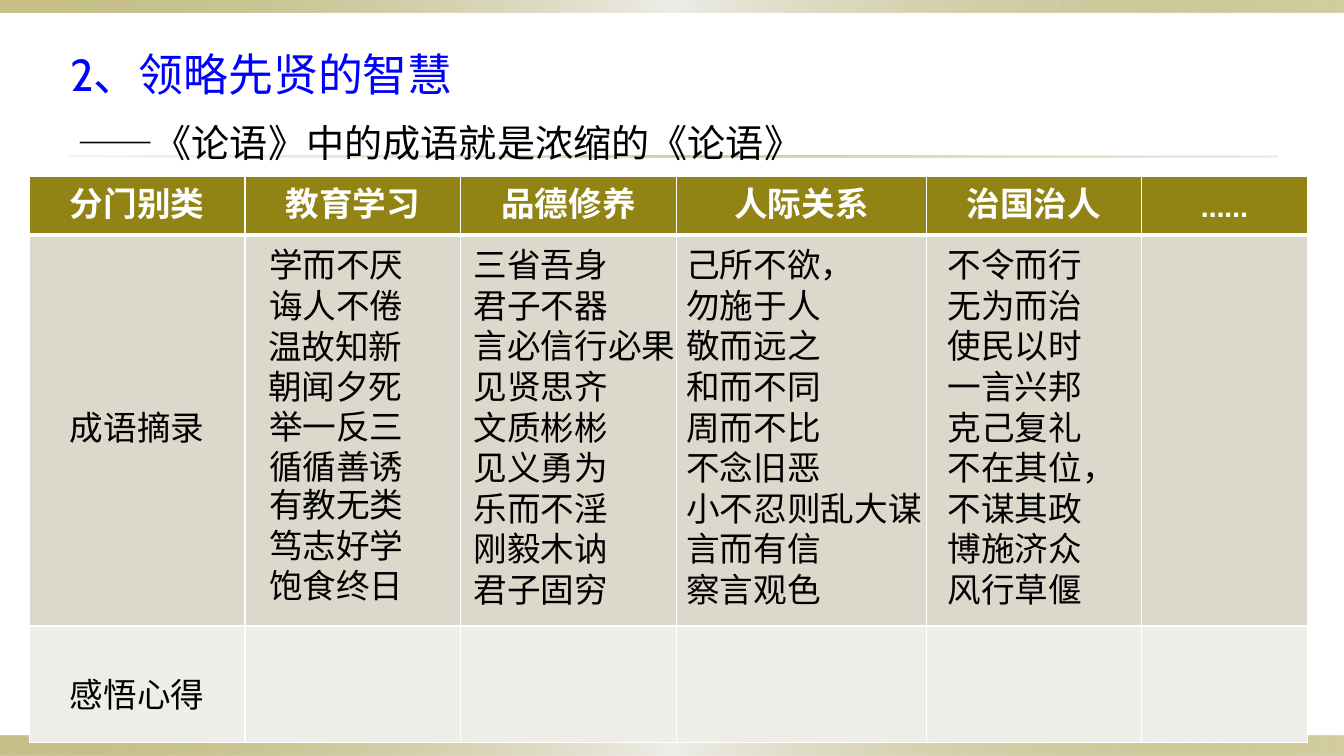
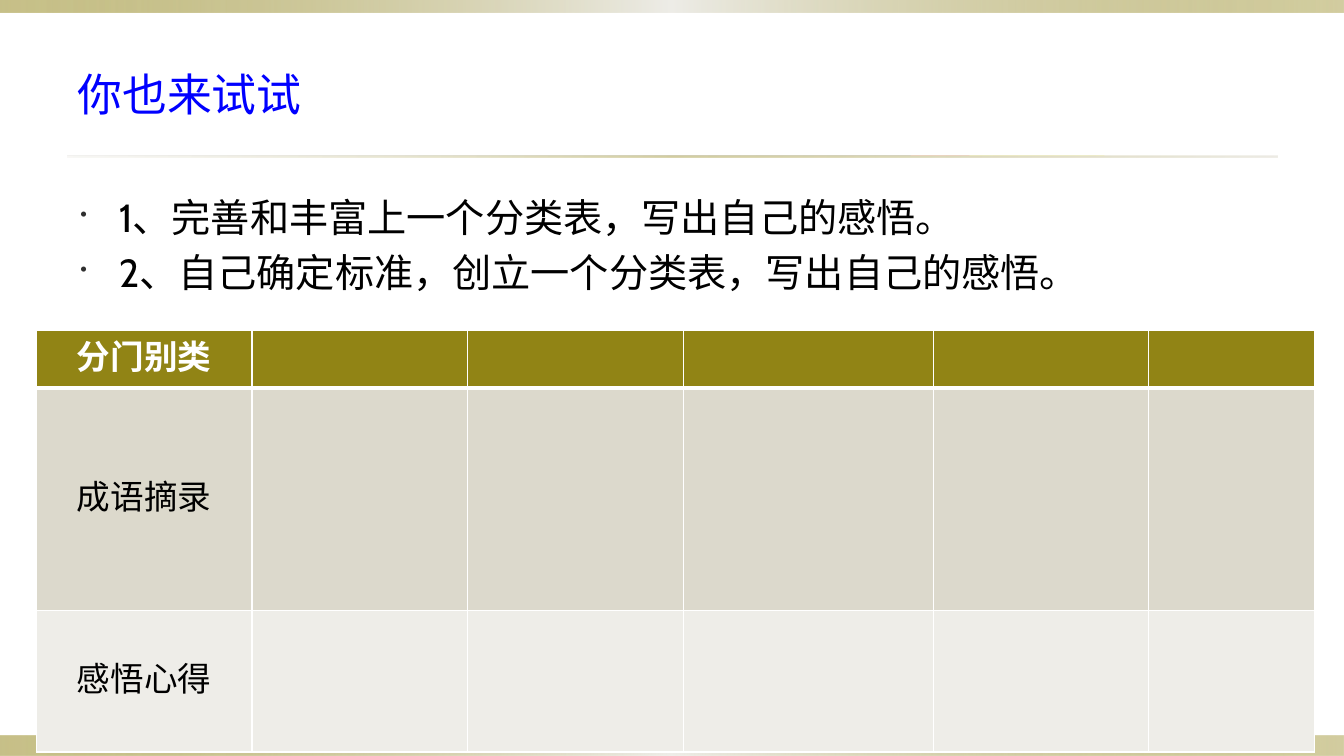
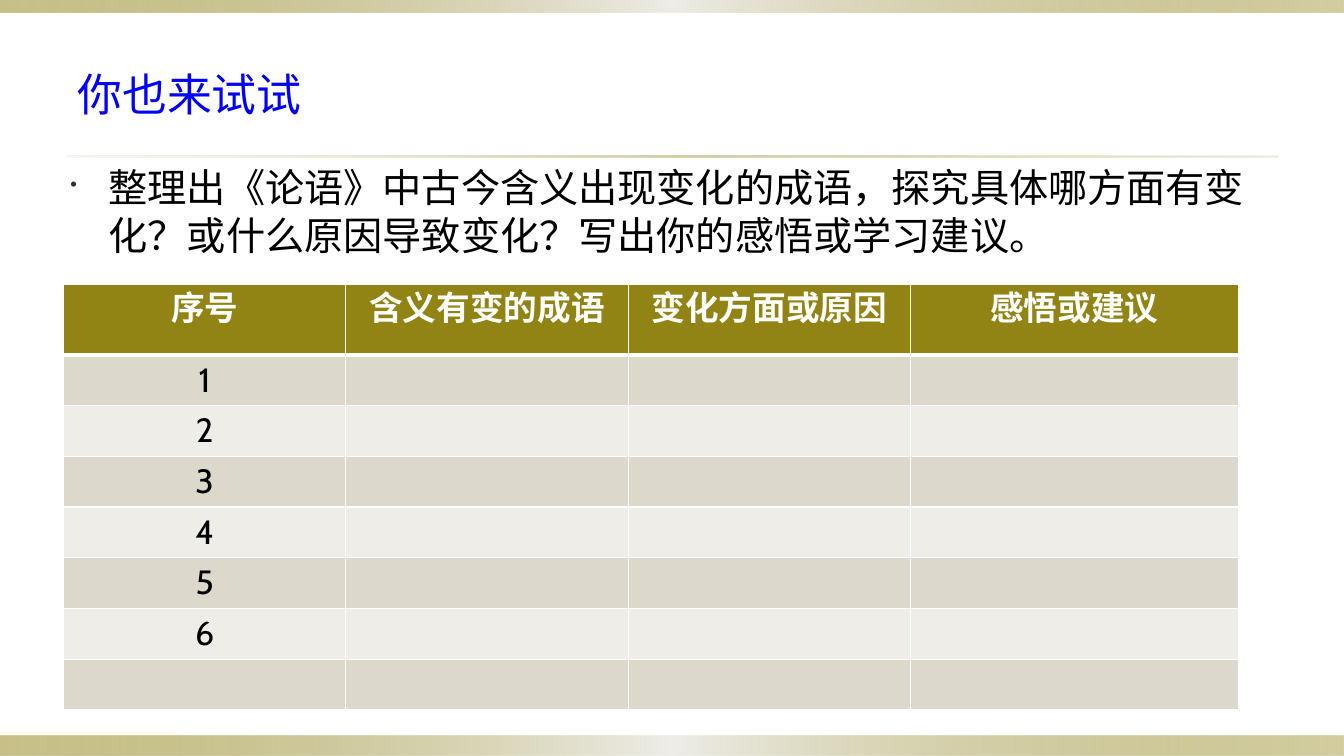
from dataclasses import dataclass

from lxml import etree
from pptx import Presentation
from pptx.dml.color import RGBColor
from pptx.enum.shapes import MSO_SHAPE
from pptx.enum.text import MSO_ANCHOR, PP_ALIGN
from pptx.oxml import parse_xml
from pptx.oxml.ns import nsdecls, qn
from pptx.util import Inches, Pt


@dataclass(frozen=True)
class Theme:
    olive: str = "918415"
    sand: str = "DCD9CC"
    pale: str = "EEEDE8"
    white: str = "FFFFFF"
    black: str = "000000"
    blue: str = "0000FF"
    dot: str = "2F2F2F"
    latin: str = "Cabin"
    asian: str = "Noto Sans CJK SC"
    title: float = 32
    body: float = 28
    sub: float = 27.2
    cell: float = 24
    lead: float = 1.21


T = Theme()


def write(frame, lines, size=T.cell, color=T.black, font=T.latin, bold=False,
          align=PP_ALIGN.LEFT, anchor=MSO_ANCHOR.TOP, before=0, bullet=False):
    """Fill a text frame with one paragraph per line."""
    frame.word_wrap = True
    frame.vertical_anchor = anchor
    for i, line in enumerate(lines):
        par = frame.paragraphs[0] if i == 0 else frame.add_paragraph()
        par.alignment = align
        par.line_spacing = Pt(round(size * T.lead, 1))
        par.space_before = Pt(before)
        if bullet:
            props = par._p.get_or_add_pPr()
            props.set("marL", str(Inches(0.38)))
            props.set("indent", str(-Inches(0.38)))
            tint = etree.SubElement(props, qn("a:buClr"))
            etree.SubElement(tint, qn("a:srgbClr"), val=T.dot)
            etree.SubElement(props, qn("a:buSzPct"), val="50000")
            etree.SubElement(props, qn("a:buChar"), char="•")
        run = par.add_run()
        run.text = line
        run.font.size = Pt(size)
        run.font.bold = bold
        run.font.name = font
        run.font.color.rgb = RGBColor.from_string(color)
        etree.SubElement(run.font._element, qn("a:ea"), typeface=T.asian)


def grid(slide, left, top, cols, rows, data, anchor=MSO_ANCHOR.MIDDLE):
    """Add a banded table; data maps (row, column) to text."""
    table = slide.shapes.add_table(
        len(rows), len(cols), Inches(left), Inches(top),
        Inches(sum(cols)), Inches(sum(rows))).table
    for col, width in zip(table.columns, cols):
        col.width = Inches(width)
    for r, height in enumerate(rows):
        table.rows[r].height = Inches(height)
        for c in range(len(cols)):
            cell = table.cell(r, c)
            cell.fill.solid()
            shade = T.olive if r == 0 else (T.pale, T.sand)[r % 2]
            cell.fill.fore_color.rgb = RGBColor.from_string(shade)
            cell.vertical_anchor = anchor
            edges = {"L": 1, "R": 1, "T": 3 if r == 1 else 1, "B": 3 if r == 0 else 1}
            for i, (side, width) in enumerate(edges.items()):
                cell._tc.get_or_add_tcPr().insert(i, parse_xml(
                    f'<a:ln{side} {nsdecls("a")} w="{Pt(width)}"><a:solidFill>'
                    f'<a:srgbClr val="{T.white}"/></a:solidFill></a:ln{side}>'))
            if (r, c) in data:
                write(cell.text_frame, [data[r, c]], bold=r == 0, anchor=anchor,
                      color=T.white if r == 0 else T.black, align=PP_ALIGN.CENTER)
    return table


deck = Presentation()
deck.slide_width, deck.slide_height = Inches(13.33), Inches(7.5)

# Bands, rule, title and body text of every slide
band = [(0, T.olive, 50), (50, T.pale, 100), (100, T.olive, 40)]
rule = [(0, T.sand, 20), (50, T.olive, 40), (100, T.sand, 50)]
bars = [(0, 7.3, 13.33, 0.2, band), (0, 0, 13.33, 0.12, band),
        (0.67, 1.54, 12, 0.02, rule)]
pages = [
    ("2、领略先贤的智慧", (0.6, 0.44, 12, 0.57),
     ["——《论语》中的成语就是浓缩的《论语》"], (0.67, 1.13, 12, 0.5),
     dict(size=T.sub)),
    ("你也来试试", (0.67, 0.3, 12, 1.25),
     ["1、完善和丰富上一个分类表，写出自己的感悟。",
      "2、自己确定标准，创立一个分类表，写出自己的感悟。"],
     (0.7, 1.86, 12, 1.25), dict(size=T.body, bullet=True)),
    ("你也来试试", (0.67, 0.3, 12, 1.25),
     ["整理出《论语》中古今含义出现变化的成语，探究具体哪方面有变化？"
      "或什么原因导致变化？写出你的感悟或学习建议。"],
     (0.6, 1.57, 12, 1.25), dict(size=T.body, bullet=True)),
]
slides = []
for title, head, body, spot, style in pages:
    slide = deck.slides.add_slide(deck.slide_layouts[6])
    slides.append(slide)
    for *box, stops in bars:
        bar = slide.shapes.add_shape(MSO_SHAPE.RECTANGLE, *map(Inches, box))
        bar.shadow.inherit = False
        marks = "".join(
            f'<a:gs pos="{pos * 1000}"><a:srgbClr val="{color}">'
            f'<a:alpha val="{alpha * 1000}"/></a:srgbClr></a:gs>'
            for pos, color, alpha in stops)
        bar.fill.background()
        props = bar.element.spPr
        props.replace(props.find(qn("a:noFill")), parse_xml(
            f'<a:gradFill {nsdecls("a")}><a:gsLst>{marks}</a:gsLst>'
            '<a:lin ang="0" scaled="0"/></a:gradFill>'))
        bar.line.fill.background()
    frame = slide.shapes.add_textbox(*map(Inches, head)).text_frame
    write(frame, [title], size=T.title, color=T.blue, anchor=MSO_ANCHOR.MIDDLE)
    frame = slide.shapes.add_textbox(*map(Inches, spot)).text_frame
    write(frame, body, before=5.6, **style)
first, second, third = slides

# Idioms sorted by theme
cols = [2.14, 2.14, 2.14, 2.48, 2.13, 1.65]
side = {(0, 0): "分门别类", (1, 0): "成语摘录", (2, 0): "感悟心得"}
kinds = ["教育学习", "品德修养", "人际关系", "治国治人", "……"]
tops = {(0, c): kind for c, kind in enumerate(kinds, 1)}
table = grid(first, 0.29, 1.75, cols, [0.58, 3.88, 1.16], side | tops)
table.cell(2, 0).margin_top = Inches(0.3)

idioms = [
    (2.57, 2.37, 1.55, 0.91, "学而不厌 诲人不倦"),
    (2.56, 3.18, 1.55, 0.91, "温故知新 朝闻夕死"),
    (2.57, 3.97, 1.55, 0.91, "举一反三 循循善诱"),
    (2.57, 4.75, 1.55, 1.31, "有教无类 笃志好学 饱食终日"),
    (4.6, 2.37, 2.22, 3.74, "三省吾身 君子不器 言必信行必果 见贤思齐 文质彬彬 "
                            "见义勇为 乐而不淫 刚毅木讷 君子固穷"),
    (6.71, 2.37, 2.56, 3.74, "己所不欲， 勿施于人 敬而远之 和而不同 周而不比 "
                             "不念旧恶 小不忍则乱大谋 言而有信 察言观色"),
    (9.3, 2.37, 1.88, 3.74, "不令而行 无为而治 使民以时 一言兴邦 克己复礼 "
                            "不在其位， 不谋其政 博施济众 风行草偃"),
]
for *box, words in idioms:
    frame = first.shapes.add_textbox(*map(Inches, box)).text_frame
    write(frame, words.split(), font=T.asian)

# Blank table to fill in
grid(second, 0.36, 3.28, cols, [0.57, 2.21, 1.4], side)

# Idioms whose meaning has changed
heads = ["序号", "含义有变的成语", "变化方面或原因", "感悟或建议"]
data = {(0, c): text for c, text in enumerate(heads)}
data |= {(n, 0): str(n) for n in range(1, 7)}
grid(third, 0.63, 2.82, [2.8, 2.8, 2.8, 3.25], [0.7] + [0.5] * 7, data,
     anchor=MSO_ANCHOR.TOP)

deck.save("out.pptx")
